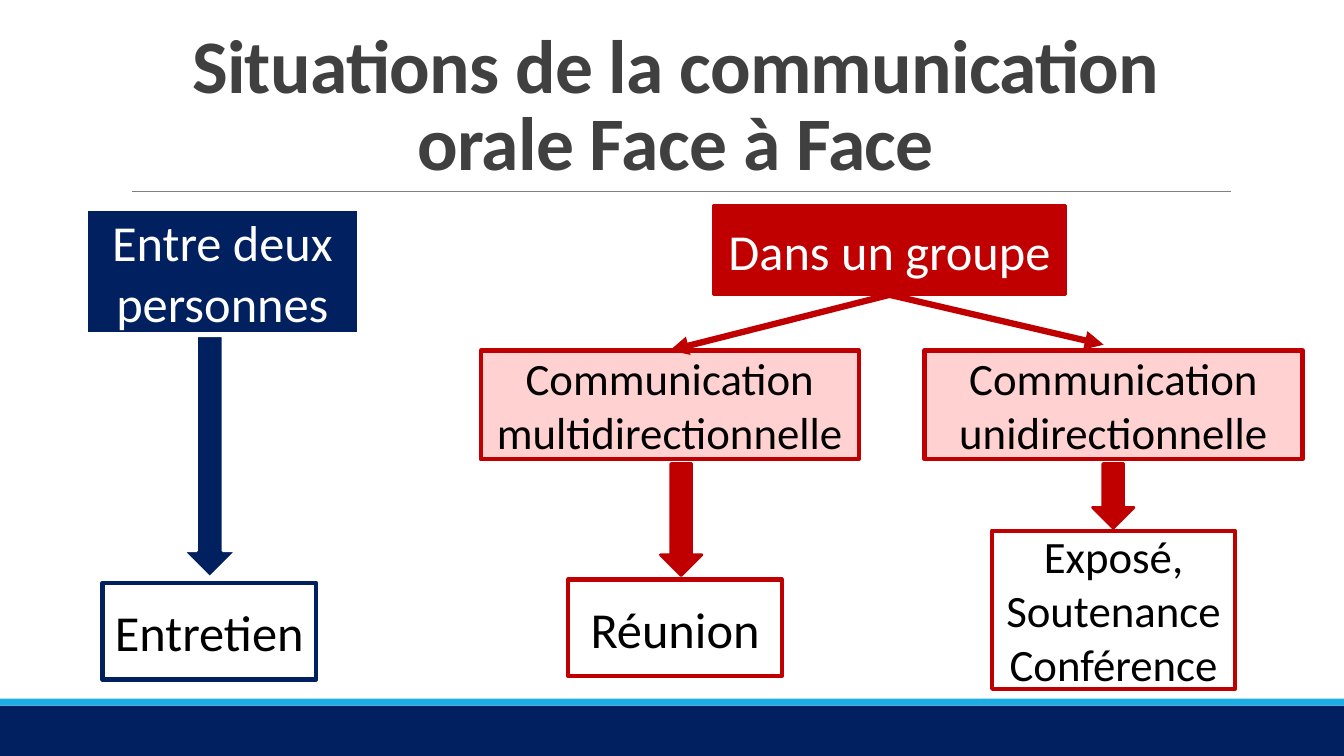
"""Build the slide on face-to-face oral communication situations."""
from lxml.etree import SubElement
from pptx import Presentation
from pptx.dml.color import RGBColor
from pptx.enum.shapes import MSO_CONNECTOR, MSO_SHAPE
from pptx.enum.text import MSO_ANCHOR, PP_ALIGN
from pptx.oxml.ns import qn
from pptx.util import Inches, Pt

NAVY = RGBColor(0x00, 0x20, 0x60)
RED = RGBColor(0xC0, 0x00, 0x00)
PINK = RGBColor(0xFF, 0xD1, 0xD1)
SKY = RGBColor(0x1C, 0xAD, 0xE4)
GRAY = RGBColor(0x80, 0x80, 0x80)
DARK = RGBColor(0x40, 0x40, 0x40)
WHITE = RGBColor(0xFF, 0xFF, 0xFF)
BLACK = RGBColor(0x00, 0x00, 0x00)

deck = Presentation()
deck.slide_width = Inches(13.33)
deck.slide_height = Inches(7.5)
slide = deck.slides.add_slide(deck.slide_layouts[6])
shapes = slide.shapes


def share(*parts):
    """Turn percents of the slide's width and height, in turn, into lengths."""
    sides = (deck.slide_width, deck.slide_height)
    return [int(part * sides[i % 2] / 100) for i, part in enumerate(parts)]


def write(shape, text, size, color):
    """Put centred text in a shape."""
    frame = shape.text_frame
    frame.word_wrap = True
    frame.text = text
    for para in frame.paragraphs:
        para.alignment = PP_ALIGN.CENTER
        font = para.runs[0].font
        font.name, font.size, font.color.rgb = "Calibri", Pt(size), color
    return frame


title = shapes.add_textbox(*share(9, 4.1, 82.52, 21.2))
frame = write(title, "Situations de la communication orale Face à Face", 54, DARK)
frame.vertical_anchor = MSO_ANCHOR.BOTTOM
head = frame.paragraphs[0]
head.line_spacing = 0.85
head.runs[0].font.bold = True
head.runs[0].font._element.set("spc", "-50")

BOX, DOWN = MSO_SHAPE.RECTANGLE, MSO_SHAPE.DOWN_ARROW
items = [
    ("base", BOX, (0, 93.33, 100, 6.67), NAVY, None, 0, "", 0, BLACK),
    ("stripe", BOX, (0, 92.4, 100, 0.93), SKY, None, 0, "", 0, BLACK),
    ("pair", BOX, (6.45, 27.73, 20.2, 16.4), NAVY, WHITE, 2,
     "Entre deux personnes", 36, WHITE),
    ("group", BOX, (53.11, 27.2, 26.15, 11.8), RED, RED, 2,
     "Dans un groupe", 36, WHITE),
    ("multi", BOX, (35.78, 46.35, 28.13, 14.4), PINK, RED, 3,
     "Communication multidirectionnelle", 32, BLACK),
    ("uni", BOX, (68.79, 46.35, 28.13, 14.4), PINK, RED, 3,
     "Communication unidirectionnelle", 32, BLACK),
    ("meeting", BOX, (42.28, 76.67, 15.9, 12.8), WHITE, RED, 3,
     "Réunion", 36, BLACK),
    ("talk", BOX, (73.82, 70.2, 18.08, 20.93), WHITE, RED, 3,
     "Exposé,\nSoutenance\nConférence", 32, BLACK),
    ("interview", BOX, (7.62, 77.1, 15.9, 12.8), WHITE, NAVY, 3,
     "Entretien", 36, BLACK),
    ("pair arrow", DOWN, (13.62, 44.4, 3.98, 32), NAVY, WHITE, 2, "", 0, BLACK),
    ("multi arrow", DOWN, (49.14, 61.33, 3.08, 14.8), RED, RED, 2, "", 0, BLACK),
    ("uni arrow", DOWN, (81.29, 61.33, 3.08, 8.53), RED, RED, 2, "", 0, BLACK),
]
made = {}
for name, kind, place, fill, edge, width, text, size, ink in items:
    shape = shapes.add_shape(kind, *share(*place))
    shape.shadow.inherit = False
    shape.fill.solid()
    shape.fill.fore_color.rgb = fill
    if edge is None:
        shape.line.fill.background()
    else:
        shape.line.color.rgb = edge
        shape.line.width = Pt(width)
    if text:
        write(shape, text, size, ink).vertical_anchor = MSO_ANCHOR.MIDDLE
    made[name] = shape

links = [
    ((9.83, 25.33, 91.57, 25.33), GRAY, 0.5, None, None),
    ((66.2, 39, 49.85, 46.35), RED, 4.5, "group", "multi"),
    ((66.2, 39, 82.12, 45.6), RED, 4.5, "group", None),
]
for ends, color, width, start, stop in links:
    link = shapes.add_connector(MSO_CONNECTOR.STRAIGHT, *share(*ends))
    link.line.color.rgb = color
    link.line.width = Pt(width)
    if start:
        link.begin_connect(made[start], 2)
        SubElement(link.line._get_or_add_ln(), qn("a:tailEnd"), type="triangle")
    if stop:
        link.end_connect(made[stop], 0)
    SubElement(link._element.spPr, qn("a:effectLst"))

deck.save("out.pptx")
